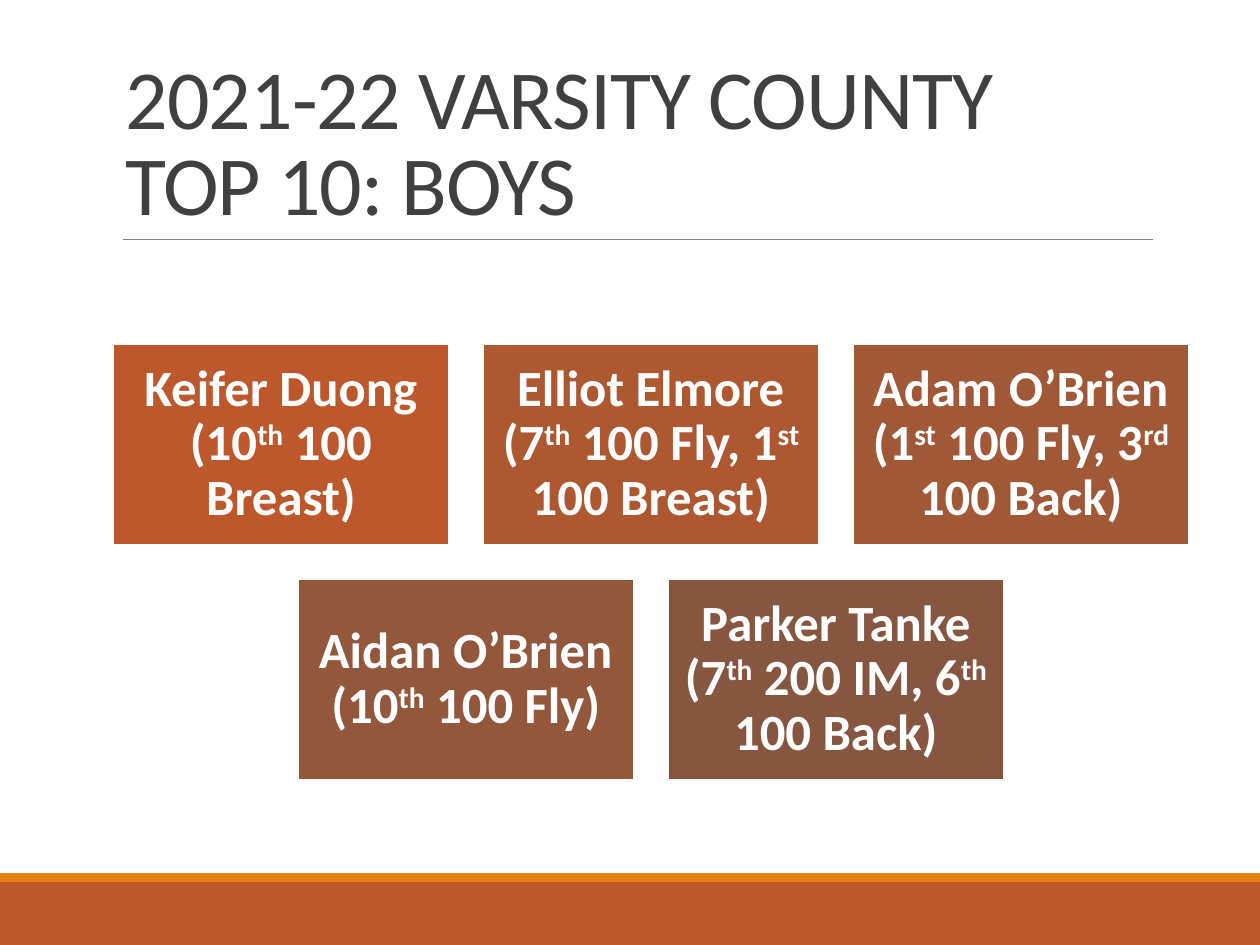
from pptx import Presentation
from pptx.dml.color import RGBColor
from pptx.enum.shapes import MSO_CONNECTOR, MSO_SHAPE
from pptx.enum.text import MSO_ANCHOR, PP_ALIGN
from pptx.oxml.ns import qn
from pptx.util import Pt
from lxml import etree

RECTANGLE = MSO_SHAPE.RECTANGLE
STRAIGHT = MSO_CONNECTOR.STRAIGHT
MIDDLE, BOTTOM = MSO_ANCHOR.MIDDLE, MSO_ANCHOR.BOTTOM
LEFT, CENTER = PP_ALIGN.LEFT, PP_ALIGN.CENTER

EMU_PER_PX = 914400 / 126
PAGE_WIDTH, PAGE_HEIGHT = 1260, 945
FONT = "Calibri"

WHITE = RGBColor(0xFF, 0xFF, 0xFF)
DARK_GRAY = RGBColor(0x40, 0x40, 0x40)
RULE_GRAY = RGBColor(0x80, 0x80, 0x80)
RUST = RGBColor(0xBD, 0x58, 0x2C)
ORANGE = RGBColor(0xE4, 0x83, 0x12)
CARD_FILLS = [
    RUST,
    RGBColor(0xAE, 0x58, 0x32),
    RGBColor(0xA0, 0x58, 0x37),
    RGBColor(0x93, 0x57, 0x3C),
    RGBColor(0x86, 0x56, 0x40),
]

TITLE = "2021-22 VARSITY COUNTY\vTOP 10: BOYS"
# Text between carets is superscript
SWIMMERS = [
    "Keifer Duong (10^th^ 100 Breast)",
    "Elliot Elmore (7^th^ 100 Fly, 1^st^ 100 Breast)",
    "Adam O’Brien (1^st^ 100 Fly, 3^rd^ 100 Back)",
    "Aidan O’Brien (10^th^ 100 Fly)",
    "Parker Tanke (7^th^ 200 IM, 6^th^ 100 Back)",
]


def px(*lengths):
    return [round(length * EMU_PER_PX) for length in lengths]


def add_rectangle(page, box, fill, outline=None):
    shape = page.shapes.add_shape(RECTANGLE, *px(*box))
    shape.shadow.inherit = False
    shape.fill.solid()
    shape.fill.fore_color.rgb = fill
    if outline is None:
        shape.line.fill.background()
    else:
        shape.line.color.rgb = outline
        shape.line.width = Pt(1.25)
    return shape


def write_text(shape, text, *, size, color, align, anchor, line_spacing,
               bold=False, tracking=None, inset=None):
    frame = shape.text_frame
    frame.word_wrap = True
    frame.vertical_anchor = anchor
    if inset is not None:
        frame.margin_left = frame.margin_right = px(inset)[0]
        frame.margin_top = frame.margin_bottom = px(inset)[0]
    para = frame.paragraphs[0]
    para.alignment = align
    para.line_spacing = line_spacing
    for line_number, line in enumerate(text.split("\v")):
        if line_number:
            para.add_line_break()
        for index, part in enumerate(line.split("^")):
            span = para.add_run()
            span.text = part
            span.font.name = FONT
            span.font.size = Pt(size)
            span.font.bold = bold
            span.font.color.rgb = color
            properties = span.font._element
            if index % 2:
                properties.set("baseline", "30000")
            if tracking is not None:
                properties.set("spc", str(round(tracking * 100)))


def add_footer(page, box):
    left, top, width, height = box
    stripe = 9
    add_rectangle(page, (left, top + stripe, width, height - stripe), RUST)
    add_rectangle(page, (left, top, width, stripe), ORANGE)


def add_title(page, box):
    left, top, width, height = box
    # Rule under the heading
    ends = px(left + 10, top + height, left + width, top + height)
    rule = page.shapes.add_connector(STRAIGHT, *ends)
    rule.line.color.rgb = RULE_GRAY
    rule.line.width = Pt(0.5)
    etree.SubElement(rule._element.spPr, qn("a:effectLst"))
    # Heading
    heading = page.shapes.add_textbox(*px(*box))
    write_text(heading, TITLE, size=48, color=DARK_GRAY, align=LEFT,
               anchor=BOTTOM, line_spacing=0.85, tracking=-0.5)


def add_cards(page, box):
    left, top, width, height = box
    columns, gap = 3, 34
    card_width = (width - (columns - 1) * gap) // columns
    card_height = (height - gap) // 2
    for index, (text, fill) in enumerate(zip(SWIMMERS, CARD_FILLS)):
        row, column = divmod(index, columns)
        in_row = min(columns, len(SWIMMERS) - row * columns)
        # Each row is centred in the box
        indent = (columns - in_row) * (card_width + gap) // 2
        card = add_rectangle(
            page,
            (left + indent + column * (card_width + gap),
             top + row * (card_height + gap), card_width, card_height),
            fill, outline=WHITE)
        write_text(card, text, size=29, color=WHITE, align=CENTER,
                   anchor=MIDDLE, line_spacing=0.9, bold=True, inset=15)


def main():
    deck = Presentation()
    deck.slide_width, deck.slide_height = px(PAGE_WIDTH, PAGE_HEIGHT)
    page = deck.slides.add_slide(deck.slide_layouts[6])
    add_footer(page, (0, 873, PAGE_WIDTH, 72))
    add_title(page, (113, 39, 1040, 200))
    add_cards(page, (113, 344, 1076, 436))
    deck.save("out.pptx")


if __name__ == "__main__":
    main()
